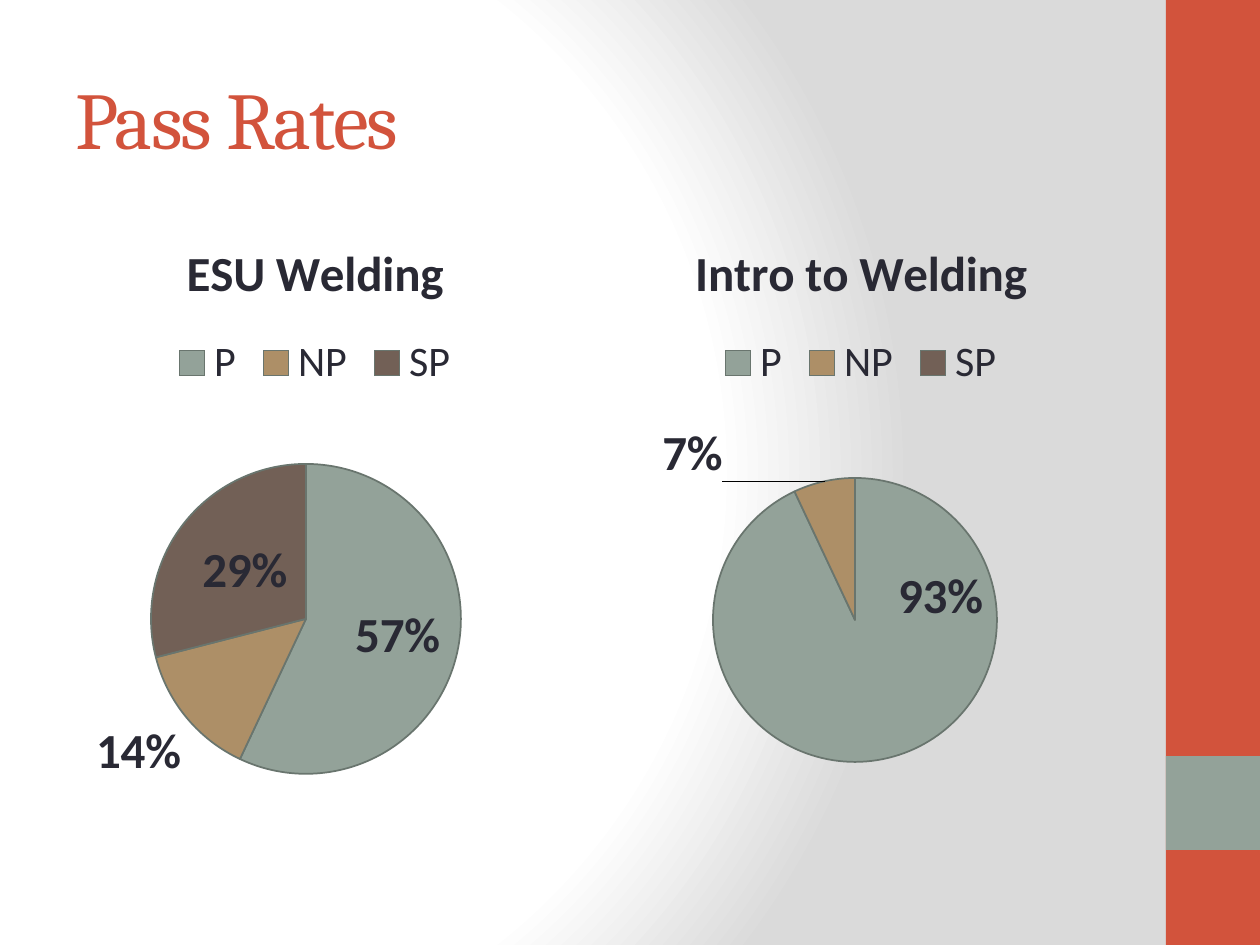
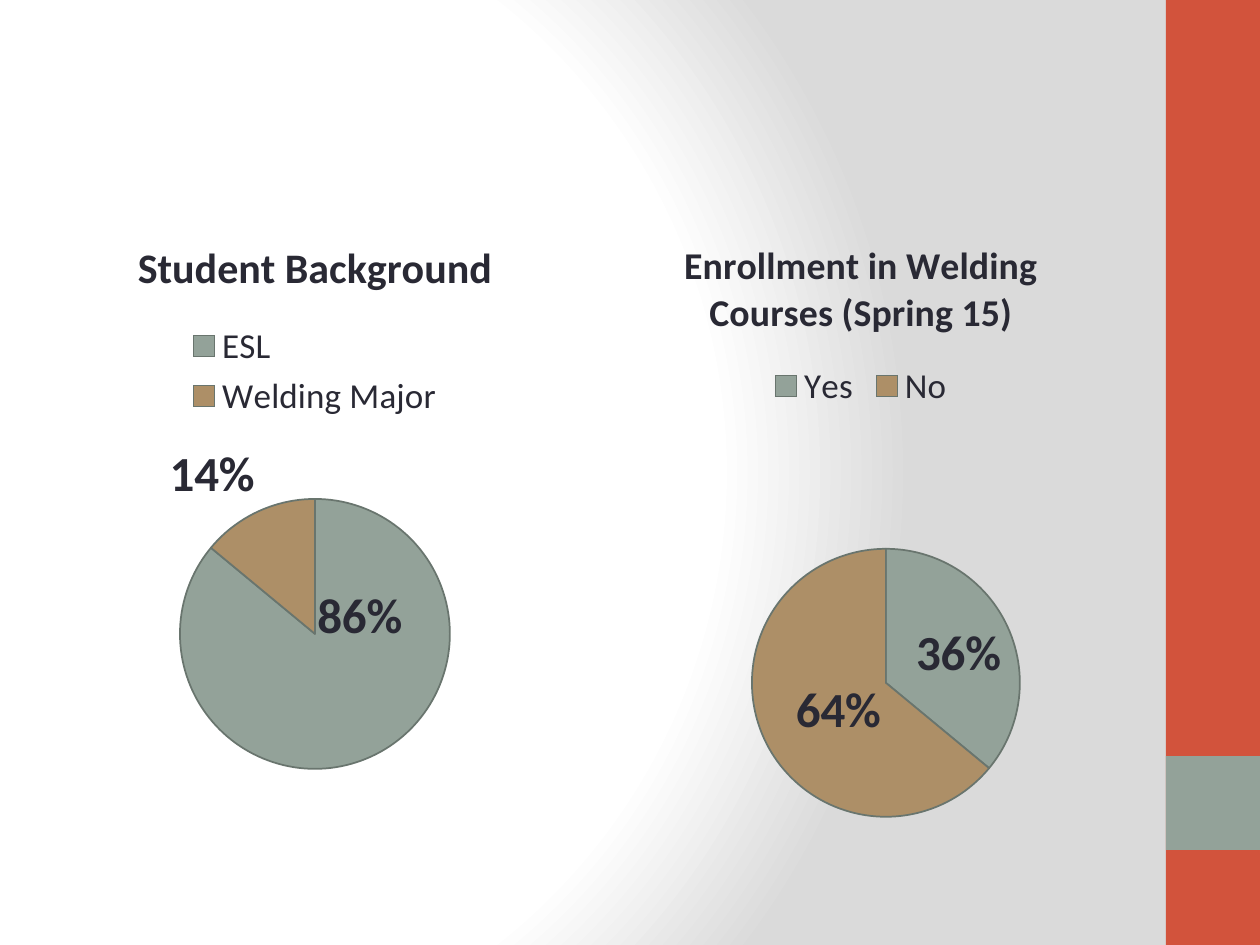
from lxml.etree import SubElement
from pptx import Presentation
from pptx.chart.data import CategoryChartData
from pptx.dml.color import RGBColor
from pptx.enum.chart import XL_CHART_TYPE as ChartType
from pptx.enum.chart import XL_LABEL_POSITION as LabelPos
from pptx.enum.chart import XL_LEGEND_POSITION as LegendPos
from pptx.enum.shapes import MSO_SHAPE as Shape
from pptx.enum.text import MSO_ANCHOR as Anchor
from pptx.oxml import parse_xml
from pptx.oxml.ns import nsdecls, qn
from pptx.util import Emu, Pt

SCALE = 914400 / 126
SLIDE_W, SLIDE_H = 1260, 945
BAND_X, BAND_W = 1166, 94
CHART_XS, CHART_Y, CHART_W, CHART_H = (63, 609), 212, 504, 632

RED = RGBColor(0xD2, 0x53, 0x3C)
SAGE = RGBColor(0x93, 0xA2, 0x99)
TAN = RGBColor(0xAD, 0x8F, 0x67)
BROWN = RGBColor(0x72, 0x60, 0x56)
OUTLINE = RGBColor(0x69, 0x75, 0x6E)
INK = RGBColor(0x29, 0x29, 0x34)
SLICES = (SAGE, TAN, BROWN)
HEAD_FONT, BODY_FONT = "Cambria", "Calibri"

BACKGROUND = f"""<p:bg {nsdecls("p", "a")}><p:bgPr><a:gradFill rotWithShape="1"><a:gsLst>
<a:gs pos="0"><a:srgbClr val="FFFFFF"/></a:gs>
<a:gs pos="75000"><a:srgbClr val="FFFFFF"/></a:gs>
<a:gs pos="100000"><a:srgbClr val="DADADA"/></a:gs></a:gsLst>
<a:path path="circle"><a:fillToRect l="20000" t="50000" r="100000" b="50000"/></a:path>
</a:gradFill><a:effectLst/></p:bgPr></p:bg>"""


def px(*lengths):
    return [Emu(round(length * SCALE)) for length in lengths]


def manual_layout(parent, index, **values):
    for old in parent.findall(qn("c:layout")):
        parent.remove(old)
    layout = SubElement(parent, qn("c:layout"))
    parent.insert(index, layout)
    manual = SubElement(layout, qn("c:manualLayout"))
    for tag, value in values.items():
        text = value if isinstance(value, str) else f"{value:.4f}"
        SubElement(manual, qn(f"c:{tag}")).set("val", text)


class Deck:
    def __init__(self):
        self.prs = Presentation()
        self.prs.slide_width, self.prs.slide_height = px(SLIDE_W, SLIDE_H)
        self.slide = None

    def new_slide(self):
        self.slide = self.prs.slides.add_slide(self.prs.slide_layouts[6])
        self.slide.element.cSld.insert(0, parse_xml(BACKGROUND))
        self.band(0, SLIDE_H, RED)
        self.band(756, 94, SAGE)

    def band(self, top, height, color):
        band = self.slide.shapes.add_shape(
            Shape.RECTANGLE, *px(BAND_X, top, BAND_W, height))
        band.shadow.inherit = False
        band.fill.solid()
        band.fill.fore_color.rgb = color
        band.line.fill.background()

    def title(self, text):
        frame = self.slide.shapes.add_textbox(*px(63, 38, 1050, 158)).text_frame
        frame.word_wrap = True
        frame.vertical_anchor = Anchor.MIDDLE
        frame.text = text
        run = frame.paragraphs[0].runs[0]
        self.style(run.font, 46, RED, HEAD_FONT)
        run.font._element.set("spc", "-100")

    def style(self, font, size, color=INK, name=BODY_FONT, bold=False):
        font.size, font.name, font.bold = Pt(size), name, bold
        font.color.rgb = color

    def pie(self, column, heading, heading_size, legend_size, rates, circle,
            labels, series_name=None):
        left = CHART_XS[column]
        data = CategoryChartData(number_format="General")
        data.categories = list(rates)
        data.add_series(series_name or heading, list(rates.values()))
        chart = self.slide.shapes.add_chart(
            ChartType.PIE, *px(left, CHART_Y, CHART_W, CHART_H), data).chart
        self.style(chart.font, 18)

        chart.has_title = True
        chart.chart_title.include_in_layout = False
        chart.chart_title.text_frame.text = heading
        run = chart.chart_title.text_frame.paragraphs[0].runs[0]
        self.style(run.font, heading_size, bold=True)

        chart.has_legend = True
        chart.legend.position = LegendPos.TOP
        chart.legend.include_in_layout = False
        self.style(chart.legend.font, legend_size)

        x, y, radius = circle
        plot_area = chart.element.find(".//" + qn("c:plotArea"))
        manual_layout(plot_area, 0, layoutTarget="inner", xMode="edge", yMode="edge",
                      x=(x - radius - left) / CHART_W,
                      y=(y - radius - CHART_Y) / CHART_H,
                      w=2 * radius / CHART_W, h=2 * radius / CHART_H)
        chart.plots[0].vary_by_categories = True
        self.slices(chart.plots[0].series[0], len(rates), labels)

    def slices(self, series, count, labels):
        percents = series.data_labels
        percents.show_value, percents.show_percentage = False, True
        percents.number_format, percents.number_format_is_linked = "0%", False
        self.style(percents.font, 28, bold=True)
        for index in range(count):
            point = series.points[index]
            point.format.fill.solid()
            point.format.fill.fore_color.rgb = SLICES[index]
            point.format.line.color.rgb = OUTLINE
            point.format.line.width = Pt(1)
            label = point.data_label
            label.position = labels[index][0] if labels[index] else LabelPos.CENTER
            self.style(label.font, 28, bold=True)
        for node, place in zip(percents._element.findall(qn("c:dLbl")), labels):
            if place is None:
                for child in list(node)[1:]:
                    node.remove(child)
                SubElement(node, qn("c:delete")).set("val", "1")
                continue
            node.find(qn("c:showVal")).set("val", "0")
            node.find(qn("c:showPercent")).set("val", "1")
            _, dx, dy = place
            if dx or dy:
                manual_layout(node, 1, x=dx / CHART_W, y=dy / CHART_H)


def main():
    inside, outside = LabelPos.CENTER, LabelPos.OUTSIDE_END
    deck = Deck()

    deck.new_slide()
    deck.title("Pass Rates")
    deck.pie(0, "ESU Welding", 28, 24, {"P": 57, "NP": 14, "SP": 29}, (306, 619, 155),
             [(inside, 16, 0), (outside, 0, 0), (inside, 0, 0)])
    deck.pie(1, "Intro to Welding", 28, 24, {"P": 93, "NP": 7, "SP": 0}, (855, 620, 142),
             [(inside, 70, -92), (outside, -100, 10), None])

    deck.new_slide()
    deck.pie(0, "Student Background", 24, 20, {"ESL": 86, "Welding Major": 14},
             (315, 634, 135), [(inside, 16, -78), (outside, 0, 0)])
    deck.pie(1, "Enrollment in Welding Courses (Spring 15)", 21.6, 20,
             {"Yes": 36, "No": 64}, (886, 683, 134),
             [(inside, 12, 0), (inside, 13, 0)], series_name="Series 1")

    deck.prs.save("out.pptx")


if __name__ == "__main__":
    main()
